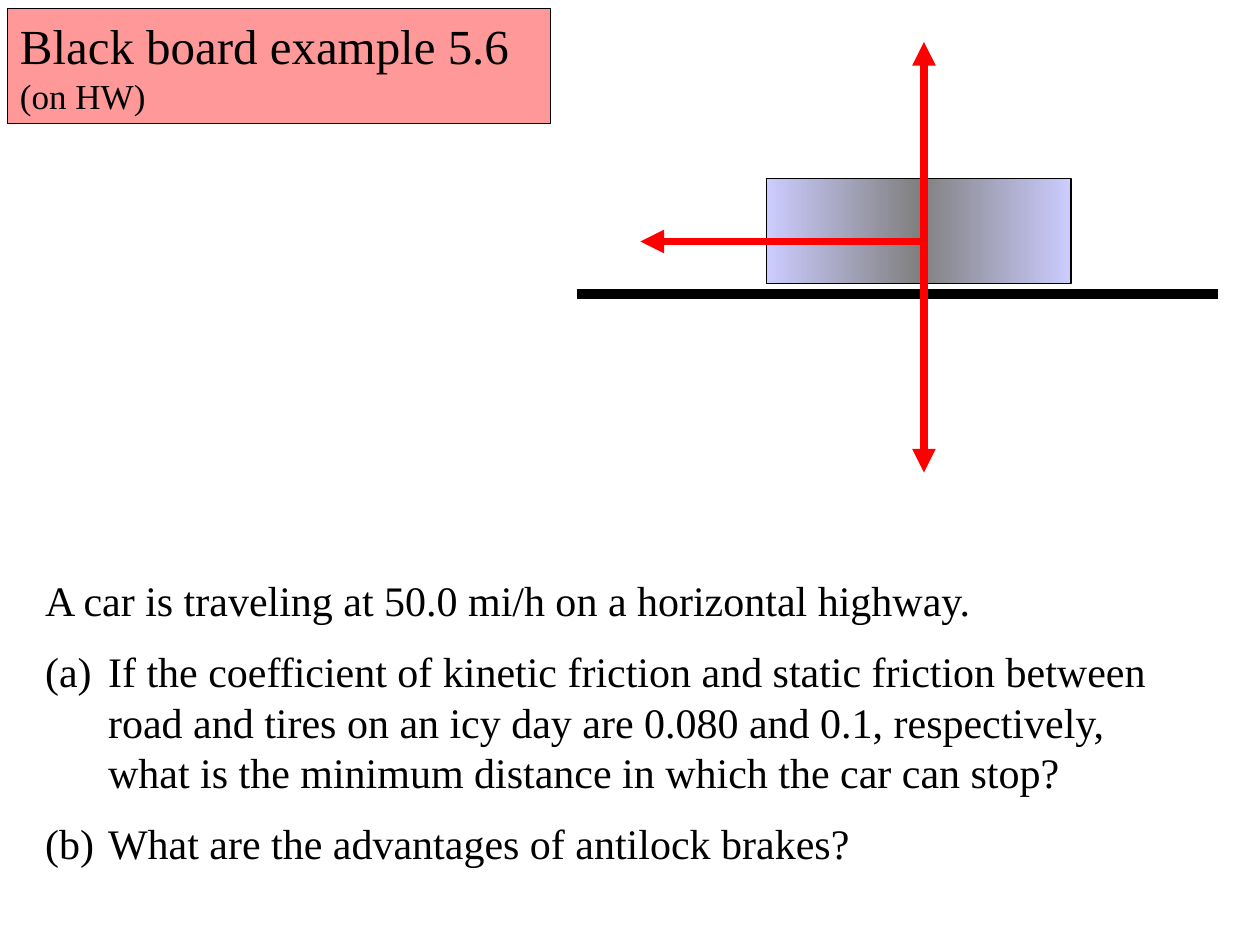
from copy import deepcopy

from lxml.etree import SubElement
from pptx import Presentation
from pptx.dml.color import RGBColor
from pptx.enum.shapes import MSO_CONNECTOR as Connector, MSO_SHAPE as Shape
from pptx.enum.text import MSO_AUTO_SIZE as AutoSize, PP_ALIGN as Align
from pptx.oxml.ns import qn
from pptx.util import Inches, Pt

BLACK = "000000"
RED = "FF0000"


def paint(color, value):
    color.rgb = RGBColor.from_string(value)


def write(para, text, size):
    span = para.add_run()
    span.text = text
    span.font.name = "Times New Roman"
    span.font.size = Pt(size)
    paint(span.font.color, BLACK)


deck = Presentation()
deck.slide_width = Inches(10)
deck.slide_height = Inches(7.5)
page = deck.slides.add_slide(deck.slide_layouts[6])
unit = deck.slide_width / 120

title = page.shapes.add_shape(
    Shape.RECTANGLE, *[int(n * unit) for n in (0.72, 0.84, 51.72, 10.92)])
title.fill.solid()
paint(title.fill.fore_color, "FF9999")
title_para = title.text_frame.paragraphs[0]
title_para.alignment = Align.LEFT
for text, size in [("Black board example 5.6 ", 28), ("(on HW)", 20)]:
    write(title_para, text, size)

problem = page.shapes.add_textbox(*[int(n * unit) for n in (3.12, 54.12, 111.6, 30)])
questions = [
    "A car is traveling at 50.0 mi/h on a horizontal highway.",
    "If the coefficient of kinetic friction and static friction between road and tires "
    "on an icy day are 0.080 and 0.1, respectively, what is the minimum distance in "
    "which the car can stop?",
    "What are the advantages of antilock brakes?",
]
for index, text in enumerate(questions):
    frame = problem.text_frame
    para = frame.add_paragraph() if index else frame.paragraphs[0]
    write(para, text, 24)

for box in (title, problem):
    box.text_frame.word_wrap = True
    box.text_frame.auto_size = AutoSize.SHAPE_TO_FIT_TEXT
    for index, para in enumerate(box.text_frame.paragraphs):
        props = para._p.get_or_add_pPr()
        spacing = SubElement(props, qn("a:spcBef"))
        SubElement(spacing, qn("a:spcPct")).set("val", "50000")
        if box is problem:
            props.set("marL", str(Inches(0.5)))
            props.set("indent", str(Inches(-0.5)))
            if index:
                SubElement(props, qn("a:buAutoNum")).set("type", "alphaLcParenBoth")
            else:
                SubElement(props, qn("a:buNone"))

block_left, block_top, block_width, block_height = 73, 17, 29, 10
center = (88, 23)
lines = [
    ((55, 28), (116, 28), BLACK, 6),
    (center, (88, 45), RED, 4.5),
    (center, (88, 4), RED, 4.5),
    (center, (61, 23), RED, 4.5),
]
for order, (start, end, color, width) in enumerate(lines):
    if order == 1:
        block = page.shapes.add_shape(
            Shape.RECTANGLE,
            *[int(n * unit) for n in (block_left, block_top, block_width, block_height)])
        block.fill.gradient()
        block.fill.gradient_angle = 0
        stop_list = block._element.spPr.find(qn("a:gradFill")).find(qn("a:gsLst"))
        stop_list.append(deepcopy(stop_list[0]))
        stops = [(0, "CCCCFF"), (0.5, "808080"), (1, "CCCCFF")]
        for stop, (position, shade) in zip(block.fill.gradient_stops, stops):
            stop.position = position
            paint(stop.color, shade)
    line = page.shapes.add_connector(
        Connector.STRAIGHT, *[int(n * unit) for n in (*start, *end)])
    paint(line.line.color, color)
    line.line.width = Pt(width)
    if color == RED:
        SubElement(line.line._get_or_add_ln(), qn("a:tailEnd")).set("type", "triangle")
    SubElement(line._element.spPr, qn("a:effectLst"))

for box in (title, block):
    box.shadow.inherit = False
    paint(box.line.color, BLACK)
    box.line.width = Pt(0.75)

deck.save("out.pptx")
